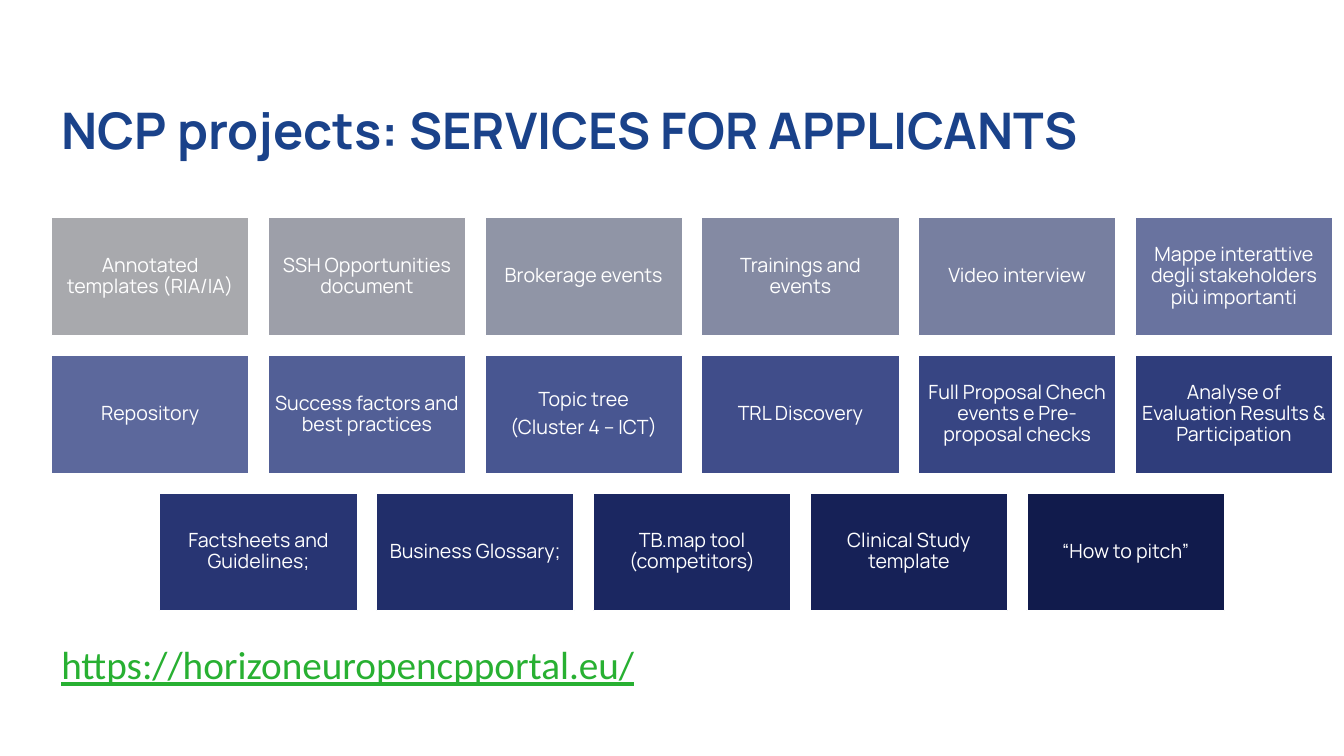
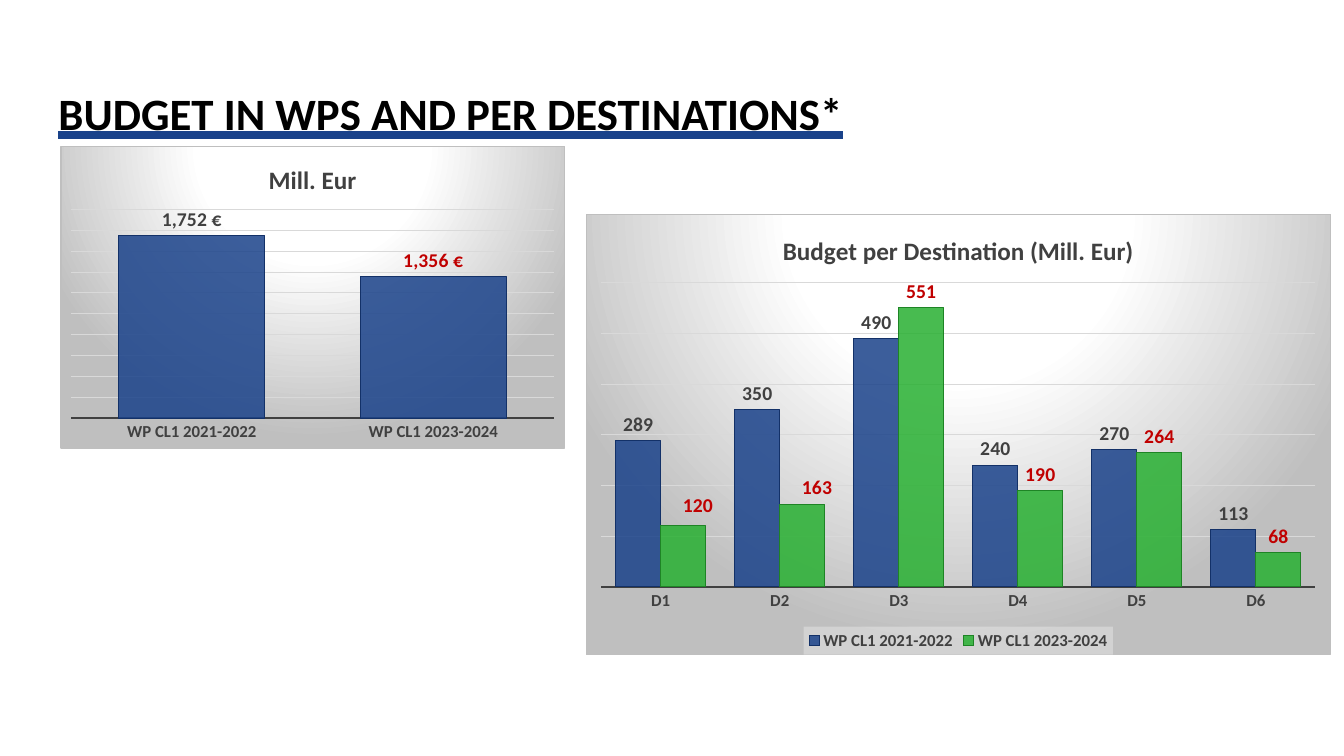
from dataclasses import dataclass
from typing import Optional

from lxml.etree import fromstring, SubElement
from pptx import Presentation
from pptx.chart.data import CategoryChartData
from pptx.dml.color import RGBColor
from pptx.enum.chart import XL_CHART_TYPE as ChartType
from pptx.enum.chart import XL_LABEL_POSITION as LabelPosition
from pptx.enum.chart import XL_LEGEND_POSITION as LegendPosition
from pptx.enum.chart import XL_TICK_MARK as TickMark
from pptx.enum.shapes import MSO_SHAPE as ShapeType
from pptx.enum.text import MSO_ANCHOR as Anchor
from pptx.enum.text import MSO_AUTO_SIZE as AutoSize
from pptx.enum.text import MSO_UNDERLINE as Underline
from pptx.enum.text import PP_ALIGN as Align
from pptx.oxml.ns import nsdecls, qn
from pptx.util import Inches, Pt

# Shared look
BLUE, GREEN, RED = "1A428A", "28B032", "C00000"
DARK, GREY, WHITE, BLACK = "404040", "BFBFBF", "FFFFFF", "000000"
HEADING_FONT, BODY_FONT = "Manrope", "Calibri"
EURO_FORMAT = '#,##0\\ "€"'

# Grid of service tiles
TILE_LEFT, TILE_TOP = 0.51, 2.16
TILE_WIDTH, TILE_HEIGHT = 1.96, 1.17
COLUMN_STEP, ROW_STEP = 2.15, 1.365
COLUMNS = 6


@dataclass
class Tile:
    text: str
    fill: str


@dataclass
class LabelOverride:
    point: int
    color: str
    shift: Optional[tuple[float, float]] = None


@dataclass
class Series:
    name: str
    values: list[int]
    fill: str
    line: str
    label_color: str
    overrides: tuple[LabelOverride, ...] = ()


@dataclass
class ColumnChart:
    box: tuple[float, float, float, float]
    title: str
    categories: list[str]
    series: list[Series]
    maximum: int
    step: int
    number_format: str = "General"
    legend: bool = False


TILES = [
    Tile("Annotated templates (RIA/IA)", "A8A9AD"),
    Tile("SSH Opportunities document", "9D9FA9"),
    Tile("Brokerage events", "9095A6"),
    Tile("Trainings and events", "848AA3"),
    Tile("Video interview", "777FA0"),
    Tile("Mappe interattive degli stakeholders più importanti", "69739F"),
    Tile("Repository", "5C689C"),
    Tile("Success factors and best practices", "525F96"),
    Tile("Topic tree\n(Cluster 4 – ICT)", "485691"),
    Tile("TRL Discovery", "404D8A"),
    Tile("Full Proposal Chech events e Pre-proposal checks", "374583"),
    Tile("Analyse of Evaluation Results & Participation", "2F3D7B"),
    Tile("Factsheets and Guidelines;", "283573"),
    Tile("Business Glossary;", "212E6A"),
    Tile("TB.map tool (competitors)", "1B2761"),
    Tile("Clinical Study template", "162157"),
    Tile("“How to pitch”", "111B4C"),
]

CHARTS = [
    ColumnChart(
        (0.6, 1.45, 5, 3), "Mill. Eur", ["WP CL1 2021-2022", "WP CL1 2023-2024"],
        [Series("Mill. Eur", [1752, 1356], BLUE, "133168", DARK, (LabelOverride(1, RED),))],
        maximum=2000, step=200, number_format=EURO_FORMAT),
    ColumnChart(
        (5.81, 2.12, 7.39, 4.38), "Budget per Destination (Mill. Eur)",
        ["D1", "D2", "D3", "D4", "D5", "D6"],
        [Series("WP CL1 2021-2022", [289, 350, 490, 240, 270, 113], BLUE, "133168", DARK),
         Series("WP CL1 2023-2024", [120, 163, 551, 190, 264, 68], GREEN, "1E8425", RED,
                (LabelOverride(0, RED, (0.02, -0.01)), LabelOverride(1, RED, (0.02, 0))))],
        maximum=600, step=100, legend=True),
]


def rgb(color: str) -> RGBColor:
    return RGBColor.from_string(color)


def style_font(font, size: float, color: str = DARK, name: str = BODY_FONT,
               bold: bool = True, underline=None) -> None:
    font.size, font.name, font.bold = Pt(size), name, bold
    font.color.rgb = rgb(color)
    if underline is not None:
        font.underline = underline


def write_text(frame, text: str, *, align=Align.LEFT, anchor=Anchor.MIDDLE,
               inset: Optional[float] = None, gap: float = 0, **font_format) -> None:
    """Fill a frame with one paragraph per line of text."""
    frame.word_wrap, frame.auto_size = True, AutoSize.NONE
    frame.vertical_anchor = anchor
    if inset is not None:
        frame.margin_left = frame.margin_right = Inches(inset)
        frame.margin_top = frame.margin_bottom = Inches(inset)
    for index, line in enumerate(text.split("\n")):
        paragraph = frame.add_paragraph() if index else frame.paragraphs[0]
        paragraph.alignment, paragraph.line_spacing = align, 0.9
        paragraph.space_before = Pt(gap if index else 0)
        run = paragraph.add_run()
        run.text = line
        style_font(run.font, **font_format)


def add_titled_slide(presentation, title: str, left: float, top: float, **font_format):
    slide = presentation.slides.add_slide(presentation.slide_layouts[5])
    shape = slide.shapes.title
    shape.left, shape.top = Inches(left), Inches(top)
    shape.width, shape.height = Inches(11.5), Inches(1.02)
    write_text(shape.text_frame, title, **font_format)
    return slide


def add_tile(slide, tile: Tile, left: float, top: float) -> None:
    shape = slide.shapes.add_shape(ShapeType.RECTANGLE, Inches(left), Inches(top),
                                   Inches(TILE_WIDTH), Inches(TILE_HEIGHT))
    shape.shadow.inherit = False
    shape.fill.solid()
    shape.fill.fore_color.rgb = rgb(tile.fill)
    shape.line.color.rgb = rgb(WHITE)
    shape.line.width = Pt(1)
    write_text(shape.text_frame, tile.text, align=Align.CENTER, inset=0.06, gap=5,
               size=14, color=WHITE, name=HEADING_FONT, bold=False)


def style_background(chart) -> None:
    """Radial grey gradient and thin border behind the whole chart."""
    stops = "".join(f'<a:gs pos="{position}"><a:srgbClr val="{color}"/></a:gs>'
                    for position, color in ((0, WHITE), (39000, WHITE), (100000, GREY)))
    background = fromstring(
        f'<c:spPr {nsdecls("c", "a")}><a:gradFill><a:gsLst>{stops}</a:gsLst>'
        '<a:path path="circle"><a:fillToRect l="50000" t="-80000" r="50000" b="180000"/>'
        f'</a:path></a:gradFill><a:ln w="9525"><a:solidFill><a:srgbClr val="{GREY}"/>'
        '</a:solidFill></a:ln></c:spPr>')
    chart.element.find(qn("c:chart")).addnext(background)


def style_axes(chart, column_chart: ColumnChart) -> None:
    category_axis, value_axis = chart.category_axis, chart.value_axis
    category_axis.major_tick_mark = TickMark.NONE
    category_axis.format.line.color.rgb = rgb(DARK)
    category_axis.format.line.width = Pt(1.5)
    style_font(category_axis.tick_labels.font, 12)
    value_axis.minimum_scale, value_axis.maximum_scale = 0, column_chart.maximum
    value_axis.major_unit = column_chart.step
    value_axis.has_major_gridlines = True
    value_axis.major_gridlines.format.line.color.rgb = rgb("D9D9D9")
    value_axis.major_gridlines.format.line.width = Pt(0.75)
    value_axis.visible = False


def style_series(plotted, series: Series, number_format: str) -> None:
    plotted.format.fill.solid()
    plotted.format.fill.fore_color.rgb = rgb(series.fill)
    fill_color = plotted._element.find(
        "/".join(qn(tag) for tag in ("c:spPr", "a:solidFill", "a:srgbClr")))
    SubElement(fill_color, qn("a:alpha")).set("val", "85000")
    plotted.format.line.color.rgb = rgb(series.line)
    plotted.format.line.width = Pt(0.75)

    labels = plotted.data_labels
    labels.show_value = True
    labels.position = LabelPosition.OUTSIDE_END
    labels.number_format, labels.number_format_is_linked = number_format, False
    style_font(labels.font, 14, series.label_color)
    for override in series.overrides:
        label = plotted.points[override.point].data_label
        style_font(label.font, 14, override.color)
        label.position = LabelPosition.OUTSIDE_END
        if override.shift:
            x, y = override.shift
            layout = fromstring(
                f'<c:layout {nsdecls("c")}><c:manualLayout><c:x val="{x}"/>'
                f'<c:y val="{y}"/></c:manualLayout></c:layout>')
            point_label = labels._element.findall(qn("c:dLbl"))[override.point]
            point_label.find(qn("c:idx")).addnext(layout)


def style_legend(chart) -> None:
    chart.has_legend = True
    legend = chart.legend
    legend.position, legend.include_in_layout = LegendPosition.BOTTOM, False
    style_font(legend.font, 12)
    panel = fromstring(
        f'<c:spPr {nsdecls("c", "a")}><a:solidFill><a:srgbClr val="F2F2F2">'
        '<a:alpha val="39000"/></a:srgbClr></a:solidFill></c:spPr>')
    legend._element.find(qn("c:txPr")).addprevious(panel)


def add_column_chart(slide, column_chart: ColumnChart) -> None:
    data = CategoryChartData(number_format=column_chart.number_format)
    data.categories = column_chart.categories
    for series in column_chart.series:
        data.add_series(series.name, series.values)
    box = [Inches(length) for length in column_chart.box]
    chart = slide.shapes.add_chart(ChartType.COLUMN_CLUSTERED, *box, data).chart

    style_background(chart)
    style_font(chart.font, 10, BLACK, bold=False)
    chart.has_title = True
    title = chart.chart_title.text_frame
    title.text = column_chart.title
    style_font(title.paragraphs[0].runs[0].font, 18)
    style_axes(chart, column_chart)

    plot = chart.plots[0]
    plot.gap_width, plot.overlap, plot.vary_by_categories = 65, 0, False
    for plotted, series in zip(plot.series, column_chart.series):
        style_series(plotted, series, column_chart.number_format)
    chart.has_legend = False
    if column_chart.legend:
        style_legend(chart)


def build_services(presentation) -> None:
    slide = add_titled_slide(presentation, "NCP projects: SERVICES FOR APPLICANTS",
                             0.51, 0.81, size=36, color=BLUE, name=HEADING_FONT)
    # Full rows start at the left edge; a shorter last row is centred
    for row, start in enumerate(range(0, len(TILES), COLUMNS)):
        row_tiles = TILES[start:start + COLUMNS]
        indent = (COLUMNS - len(row_tiles)) * COLUMN_STEP / 2
        for column, tile in enumerate(row_tiles):
            add_tile(slide, tile, TILE_LEFT + indent + column * COLUMN_STEP,
                     TILE_TOP + row * ROW_STEP)
    # Portal address
    address = slide.shapes.add_textbox(Inches(0.51), Inches(6.36), Inches(11.5), Inches(0.6))
    write_text(address.text_frame, "https://horizoneuropencpportal.eu/", anchor=Anchor.TOP,
               size=28, color=GREEN, bold=False, underline=True)


def build_budget(presentation) -> None:
    slide = add_titled_slide(presentation, "BUDGET IN WPS AND PER DESTINATIONS*", 0.48, 0.64,
                             size=32, color=BLACK, underline=Underline.HEAVY_LINE)
    # Blue underline below the black title
    run = slide.shapes.title.text_frame.paragraphs[0].runs[0]
    underline_fill = fromstring(f'<a:uFill {nsdecls("a")}><a:solidFill>'
                                f'<a:srgbClr val="{BLUE}"/></a:solidFill></a:uFill>')
    run._r.get_or_add_rPr().find(qn("a:solidFill")).addnext(underline_fill)
    for column_chart in CHARTS:
        add_column_chart(slide, column_chart)


def main() -> None:
    presentation = Presentation()
    presentation.slide_width, presentation.slide_height = Inches(13.33), Inches(7.5)
    build_services(presentation)
    build_budget(presentation)
    presentation.save("out.pptx")


if __name__ == "__main__":
    main()
